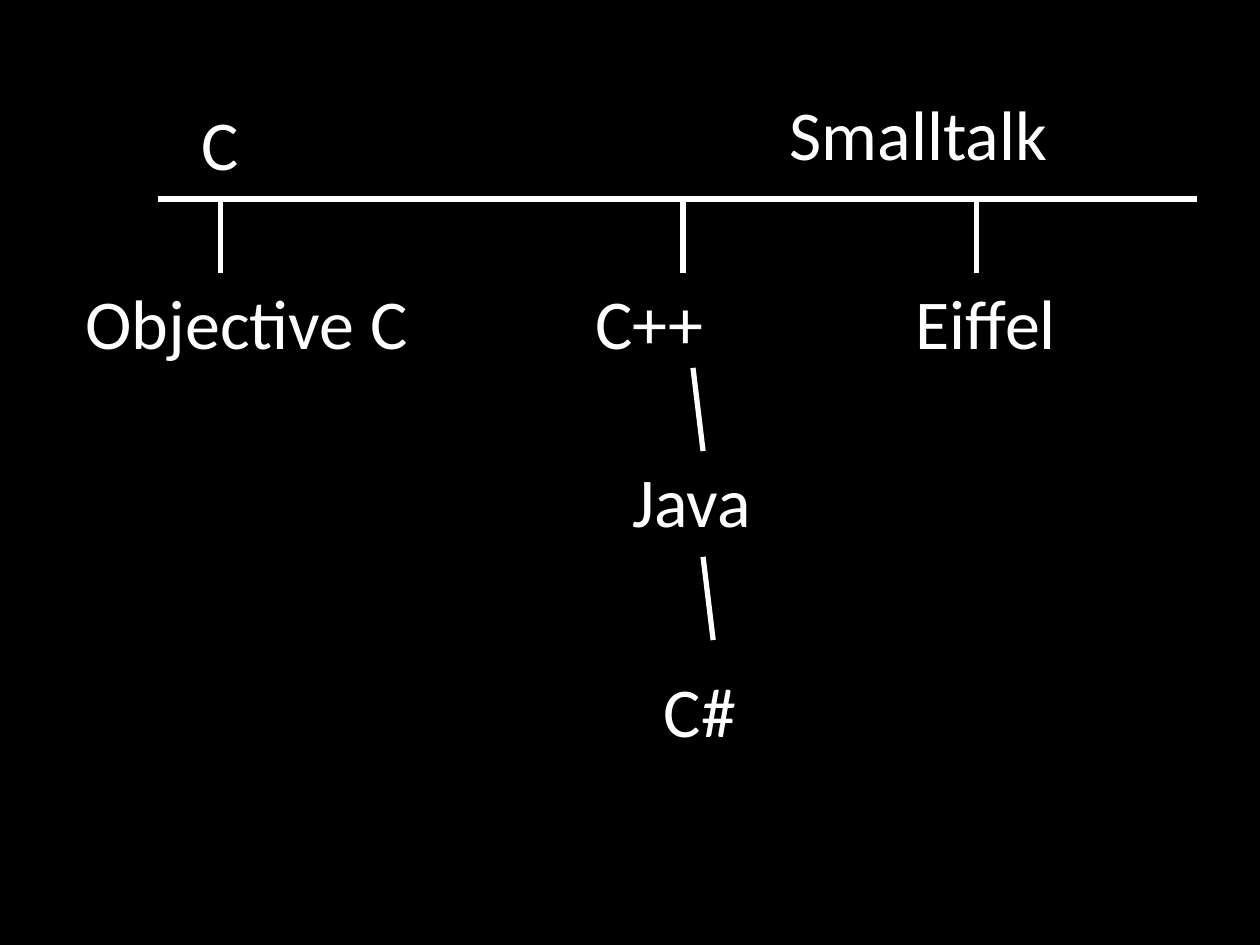
from lxml import etree
from pptx import Presentation
from pptx import util as u
from pptx.dml.color import RGBColor
from pptx.enum import shapes, text
from pptx.oxml.ns import qn

BLACK, WHITE = "000000", "FFFFFF"
LABEL_H = 0.77


def color(hex_string):
    return RGBColor.from_string(hex_string)


def add_text(s, words, x, y, w, h, size=40, font="Calibri", fill=WHITE):
    sp = s.shapes.add_textbox(*map(u.Inches, (x, y, w, h)))
    tf = sp.text_frame
    tf.word_wrap = False
    tf.auto_size = text.MSO_AUTO_SIZE.SHAPE_TO_FIT_TEXT
    r = tf.paragraphs[0].add_run()
    r.text = words
    r.font.size = u.Pt(size)
    r.font.name = font
    r.font.color.rgb = color(fill)


def add_line(s, x1, y1, x2, y2, width=3, stroke=WHITE):
    cx = s.shapes.add_connector(shapes.MSO_CONNECTOR.STRAIGHT,
                                *map(u.Inches, (x1, y1, x2, y2)))
    cx.line.width = u.Pt(width)
    cx.line.color.rgb = color(stroke)
    etree.SubElement(cx._element.spPr, qn("a:effectLst"))


def add_parents(s, x, y):
    for words, dx, dy, w in (("C", 0.25, 0.08, 0.57),
                             ("Smalltalk", 4.92, 0, 2.5)):
        add_text(s, words, x + dx, y + dy, w, LABEL_H)


def add_children(s, x, y, w, drop=0.59):
    """Horizontal bar with a stem down to each direct descendant."""
    add_line(s, x, y, x + w, y)
    for words, stem, label, label_w in (("Objective C", 0.5, -0.67, 3.01),
                                        ("C++", 4.17, 3.38, 1.5),
                                        ("Eiffel", 6.5, 5.92, 1.5)):
        add_line(s, x + stem, y + drop, x + stem, y)
        add_text(s, words, x + label, y + drop, label_w, LABEL_H)


def add_descendants(s, x, y):
    """Chain of slanted links, each leading down to the next language."""
    for words, dx, dy, label_dx, label_dy, w in (
            ("Java", 0, 0, -0.58, 0.66, 1.27),
            ("C#", 0.08, 1.5, -0.41, 0.83, 1)):
        left, top = x + dx, y + dy
        add_line(s, left + 0.08, top + 0.66, left, top)
        add_text(s, words, left + label_dx, top + label_dy, w, LABEL_H)


def main():
    prs = Presentation()
    prs.slide_width, prs.slide_height = u.Inches(10), u.Inches(7.5)
    s = prs.slides.add_slide(prs.slide_layouts[6])
    s.background.fill.solid()
    s.background.fill.fore_color.rgb = color(BLACK)
    add_parents(s, 1.25, 0.67)
    add_children(s, 1.25, 1.58, 8.25)
    add_descendants(s, 5.5, 2.92)
    prs.save("out.pptx")


if __name__ == "__main__":
    main()
